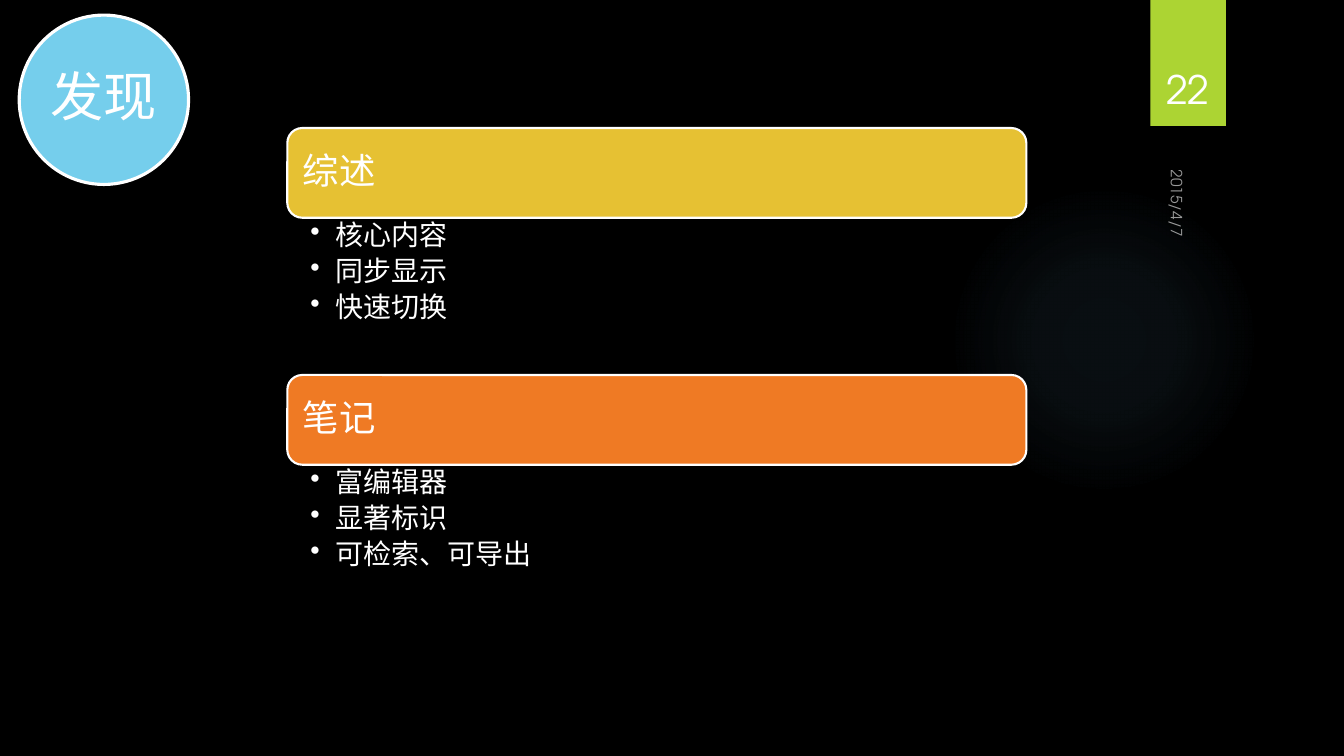
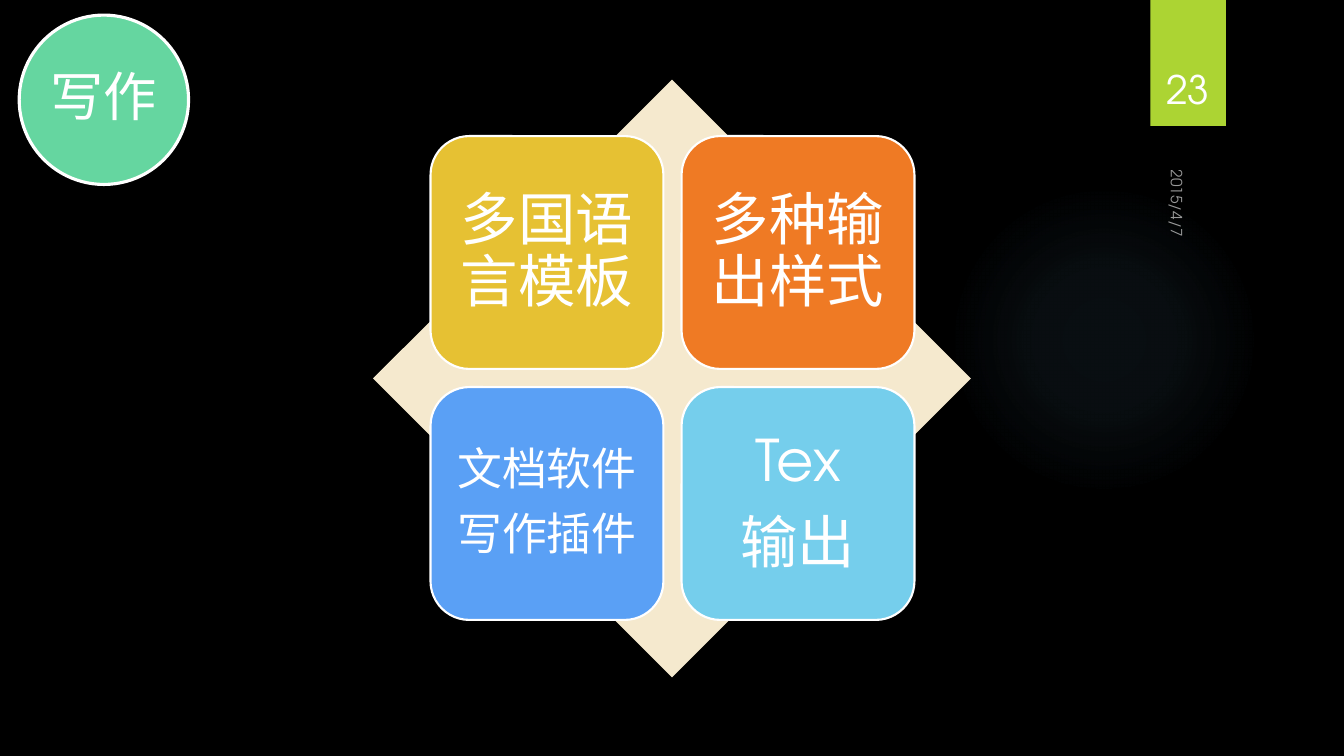
from dataclasses import dataclass
from typing import Optional

from lxml.etree import SubElement
from pptx import Presentation
from pptx.dml.color import RGBColor
from pptx.enum.shapes import MSO_SHAPE
from pptx.enum.text import MSO_ANCHOR, PP_ALIGN
from pptx.oxml import parse_xml
from pptx.oxml.ns import nsdecls, qn
from pptx.shapes.autoshape import Shape
from pptx.slide import Slide
from pptx.util import Inches, Pt


@dataclass(frozen=True)
class Theme:
    background: str = "000000"
    text: str = "FFFFFF"
    glow: str = "7AC4F0"
    green: str = "ACD433"
    yellow: str = "E6C133"
    orange: str = "EF7A24"
    blue: str = "5AA0F5"
    sky: str = "75CEEC"
    mint: str = "65D6A0"
    cream: str = "F5E9CE"
    latin_font: str = "TeX Gyre Adventor"
    chinese_font: str = "Noto Sans CJK SC"
    date_size: int = 11
    bullet_size: int = 20
    heading_size: int = 26
    number_size: int = 28
    small_card_size: int = 32
    badge_size: int = 38
    card_size: int = 41
    badge_line: float = 2.25
    outline: float = 1.5


THEME = Theme()


@dataclass(frozen=True)
class Box:
    left: float
    top: float
    width: float
    height: float


@dataclass(frozen=True)
class TextStyle:
    size: int
    font: str = THEME.latin_font
    alignment: PP_ALIGN = PP_ALIGN.LEFT
    anchor: MSO_ANCHOR = MSO_ANCHOR.TOP
    margins: tuple[float, float, float, float] = (0.1, 0.05, 0.1, 0.05)
    line_spacing: Optional[float] = None
    space_after: float = 0
    bulleted: bool = False
    opacity: int = 100


@dataclass(frozen=True)
class Section:
    heading: str
    color: str
    points: tuple[str, ...]


@dataclass(frozen=True)
class Card:
    lines: tuple[str, ...]
    color: str
    size: int = THEME.card_size
    margin: float = 0.17


DATE_STYLE = TextStyle(THEME.date_size, opacity=60)
NUMBER_STYLE = TextStyle(
    THEME.number_size, alignment=PP_ALIGN.CENTER, anchor=MSO_ANCHOR.BOTTOM
)
BADGE_STYLE = TextStyle(
    THEME.badge_size, THEME.chinese_font, PP_ALIGN.CENTER, MSO_ANCHOR.MIDDLE,
    (0.05,) * 4, 0.9, 0.35,
)
HEADING_STYLE = TextStyle(
    THEME.heading_size, THEME.chinese_font, PP_ALIGN.LEFT, MSO_ANCHOR.MIDDLE,
    (0.11,) * 4, 0.9, 0.35,
)
BULLET_STYLE = TextStyle(
    THEME.bullet_size, THEME.chinese_font, margins=(0.23, 0.04, 0.2, 0.04),
    line_spacing=0.9, space_after=0.2, bulleted=True,
)

SECTIONS = (
    Section("综述", THEME.yellow, ("核心内容", "同步显示", "快速切换")),
    Section("笔记", THEME.orange, ("富编辑器", "显著标识", "可检索、可导出")),
)
CARDS = (
    Card(("多国语言模板",), THEME.yellow),
    Card(("多种输出样式",), THEME.orange),
    Card(("文档软件", "写作插件"), THEME.blue, THEME.small_card_size, 0.13),
    Card(("Tex", "输出"), THEME.sky),
)


def write_text(shape: Shape, lines: tuple[str, ...], style: TextStyle) -> None:
    frame = shape.text_frame
    frame.text = "\n".join(lines)
    frame.word_wrap = True
    frame.vertical_anchor = style.anchor
    (frame.margin_left, frame.margin_top,
     frame.margin_right, frame.margin_bottom) = map(Inches, style.margins)
    for paragraph in frame.paragraphs:
        if style.bulleted:
            properties = paragraph._p.get_or_add_pPr()
            properties.set("marL", str(Inches(0.25)))
            properties.set("indent", str(-Inches(0.25)))
            SubElement(properties, qn("a:buChar")).set("char", "•")
        paragraph.alignment = style.alignment
        paragraph.line_spacing = style.line_spacing
        paragraph.space_after = Pt(style.size * style.space_after)
        for run in paragraph.runs:
            run.font.size = Pt(style.size)
            run.font.name = style.font
            run.font.color.rgb = RGBColor.from_string(THEME.text)
            east_asian = SubElement(run._r.get_or_add_rPr(), qn("a:ea"))
            east_asian.set("typeface", THEME.latin_font)
            if style.opacity < 100:
                color = run._r.rPr.find(qn("a:solidFill"))[0]
                SubElement(color, qn("a:alpha")).set("val", str(style.opacity * 1000))


def add_text(slide: Slide, box: Box, lines: tuple[str, ...], style: TextStyle) -> Shape:
    shape = slide.shapes.add_textbox(
        Inches(box.left), Inches(box.top), Inches(box.width), Inches(box.height)
    )
    write_text(shape, lines, style)
    return shape


def add_panel(
    slide: Slide, kind: MSO_SHAPE, box: Box, color: str, line_width: float = 0
) -> Shape:
    shape = slide.shapes.add_shape(
        kind, Inches(box.left), Inches(box.top), Inches(box.width), Inches(box.height)
    )
    shape.shadow.inherit = False
    shape.fill.solid()
    shape.fill.fore_color.rgb = RGBColor.from_string(color)
    if line_width:
        shape.line.color.rgb = RGBColor.from_string(THEME.text)
        shape.line.width = Pt(line_width)
    else:
        shape.line.fill.background()
    return shape


def add_glow(slide: Slide) -> None:
    glow = add_panel(slide, MSO_SHAPE.OVAL, Box(9.41, 1.83, 3.08, 3.08), THEME.glow)
    stops = "".join(
        f'<a:gs pos="{position * 1000}"><a:srgbClr val="{THEME.glow}">'
        f'<a:alpha val="{opacity * 1000}"/></a:srgbClr></a:gs>'
        for position, opacity in ((0, 7), (36, 6), (69, 0))
    )
    gradient = parse_xml(
        f'<a:gradFill {nsdecls("a")}><a:gsLst>{stops}</a:gsLst><a:path path="circle">'
        '<a:fillToRect l="50000" t="50000" r="50000" b="50000"/></a:path></a:gradFill>'
    )
    properties = glow._element.spPr
    properties.replace(properties.find(qn("a:solidFill")), gradient)


def add_base_slide(
    presentation: Presentation, number: int, title: str, badge_color: str
) -> Slide:
    slide = presentation.slides.add_slide(presentation.slide_layouts[6])
    slide.background.fill.solid()
    slide.background.fill.fore_color.rgb = RGBColor.from_string(THEME.background)
    add_glow(slide)
    add_panel(slide, MSO_SHAPE.RECTANGLE, Box(11.41, 0, 0.75, 1.25), THEME.green)
    date = add_text(slide, Box(11.11, 1.96, 1.08, 0.33), ("2015/4/7",), DATE_STYLE)
    date.rotation = 90
    add_text(slide, Box(11.32, 0.32, 0.92, 0.84), (str(number),), NUMBER_STYLE)
    badge = add_panel(
        slide, MSO_SHAPE.OVAL, Box(0.19, 0.15, 1.68, 1.68), badge_color, THEME.badge_line
    )
    write_text(badge, (title,), BADGE_STYLE)
    return slide


def add_sections(slide: Slide) -> None:
    left, top, width = 2.85, 1.27, 7.33
    heading_height, list_height = 0.89, 1.56
    for section in SECTIONS:
        heading = add_panel(
            slide, MSO_SHAPE.ROUNDED_RECTANGLE,
            Box(left, top, width, heading_height), section.color, THEME.outline,
        )
        write_text(heading, (section.heading,), HEADING_STYLE)
        top += heading_height
        add_text(slide, Box(left, top, width, list_height), section.points, BULLET_STYLE)
        top += list_height


def add_cards(slide: Slide) -> None:
    add_panel(slide, MSO_SHAPE.DIAMOND, Box(3.7, 0.79, 5.93, 5.93), THEME.cream)
    left, top, side, pitch = 4.27, 1.35, 2.31, 2.49
    for index, card in enumerate(CARDS):
        row, column = divmod(index, 2)
        box = Box(left + column * pitch, top + row * pitch, side, side)
        shape = add_panel(
            slide, MSO_SHAPE.ROUNDED_RECTANGLE, box, card.color, THEME.outline
        )
        style = TextStyle(
            card.size, alignment=PP_ALIGN.CENTER, anchor=MSO_ANCHOR.MIDDLE,
            margins=(card.margin,) * 4, line_spacing=0.9, space_after=0.35,
        )
        write_text(shape, card.lines, style)


def main() -> None:
    presentation = Presentation()
    presentation.slide_width = Inches(13.33)
    presentation.slide_height = Inches(7.5)
    add_sections(add_base_slide(presentation, 22, "发现", THEME.sky))
    add_cards(add_base_slide(presentation, 23, "写作", THEME.mint))
    presentation.save("out.pptx")


if __name__ == "__main__":
    main()
